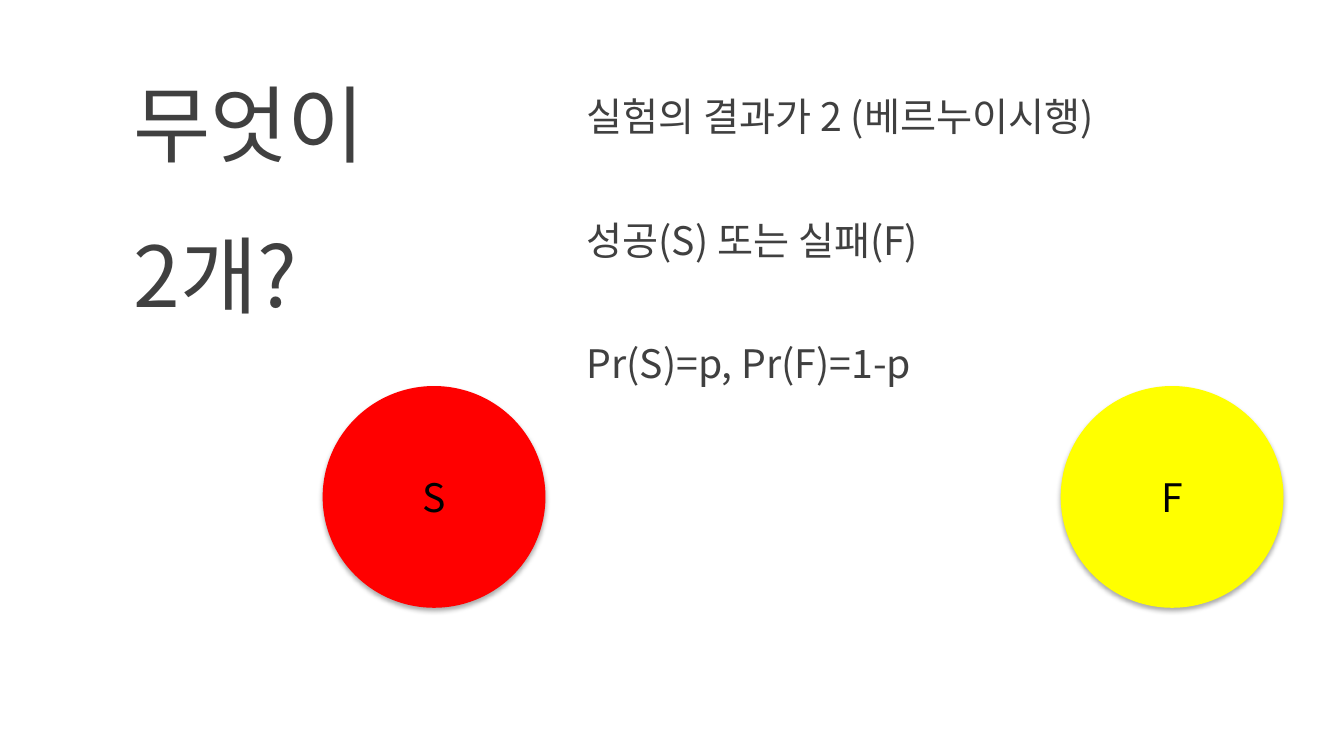
from lxml.etree import SubElement
from pptx import Presentation
from pptx.dml.color import RGBColor
from pptx.enum.shapes import MSO_SHAPE as SHAPE
from pptx.enum.text import MSO_ANCHOR as ANCHOR, PP_ALIGN as ALIGN
from pptx.oxml.ns import qn
from pptx.util import Inches, Pt

FONT = "Noto Sans CJK KR"
GREY = RGBColor(0x40, 0x40, 0x40)
BLACK = RGBColor(0, 0, 0)
RED = RGBColor(0xFF, 0, 0)
YELLOW = RGBColor(0xFF, 0xFF, 0)


def write(frame, lines, size=28, color=GREY, align=ALIGN.LEFT, anchor=ANCHOR.TOP,
          line_spacing=1.0, gap=0, tracking=0, wrap=True):
    """Fill a text frame with one paragraph per line."""
    frame.word_wrap = wrap
    frame.vertical_anchor = anchor
    for index, line in enumerate(lines):
        paragraph = frame.paragraphs[0] if index == 0 else frame.add_paragraph()
        paragraph.text = line
        paragraph.alignment = align
        paragraph.line_spacing = line_spacing
        paragraph.space_after = Pt(gap)
        for run in paragraph.runs:
            run.font.size = Pt(size)
            run.font.color.rgb = color
            run.font.name = FONT
            properties = run.font._element
            SubElement(properties, qn("a:ea"), typeface=FONT)
            if tracking:
                properties.set("spc", str(round(tracking * 100)))


def add_text(slide, left, top, width, height, lines, **style):
    """Add a text box at a place given in inches."""
    box = slide.shapes.add_textbox(Inches(left), Inches(top), Inches(width), Inches(height))
    write(box.text_frame, lines, **style)


def add_shadow(shape):
    """Give a shape a soft shadow below it."""
    shape.shadow.inherit = False
    effects = shape._element.spPr.find(qn("a:effectLst"))
    shadow = SubElement(effects, qn("a:outerShdw"), blurRad=str(Pt(3.5)), dist=str(Pt(2.2)),
                        dir="5400000", algn="ctr", rotWithShape="0")
    black = SubElement(shadow, qn("a:srgbClr"), val=str(BLACK))
    SubElement(black, qn("a:alpha"), val="32000")


def add_outcome(slide, left, label, fill):
    """Add the ball that stands for one outcome of the trial."""
    ball = slide.shapes.add_shape(SHAPE.OVAL, Inches(left), Inches(3.83), Inches(2.21), Inches(2.2))
    ball.fill.solid()
    ball.fill.fore_color.rgb = fill
    ball.line.fill.background()
    add_shadow(ball)
    write(ball.text_frame, [label], color=BLACK, align=ALIGN.CENTER, anchor=ANCHOR.MIDDLE, wrap=False)


def main():
    """Build and save the slide on Bernoulli trials."""
    deck = Presentation()
    deck.slide_width, deck.slide_height = Inches(13.33), Inches(7.5)
    slide = deck.slides.add_slide(deck.slide_layouts[6])
    add_text(slide, 1.23, 0.29, 3.56, 2.98, ["무엇이 \v2개?"], size=60,
             anchor=ANCHOR.BOTTOM, line_spacing=1.5, tracking=-0.5)
    trial_facts = ["실험의 결과가 2 (베르누이시행)", "성공(S) 또는 실패(F)", "Pr(S)=p, Pr(F)=1-p"]
    add_text(slide, 5.72, 0.92, 5.97, 4.29, trial_facts, line_spacing=0.9, gap=58)
    for left, label, fill in [(3.2, "S", RED), (10.52, "F", YELLOW)]:
        add_outcome(slide, left, label, fill)
    deck.save("out.pptx")


if __name__ == "__main__":
    main()
